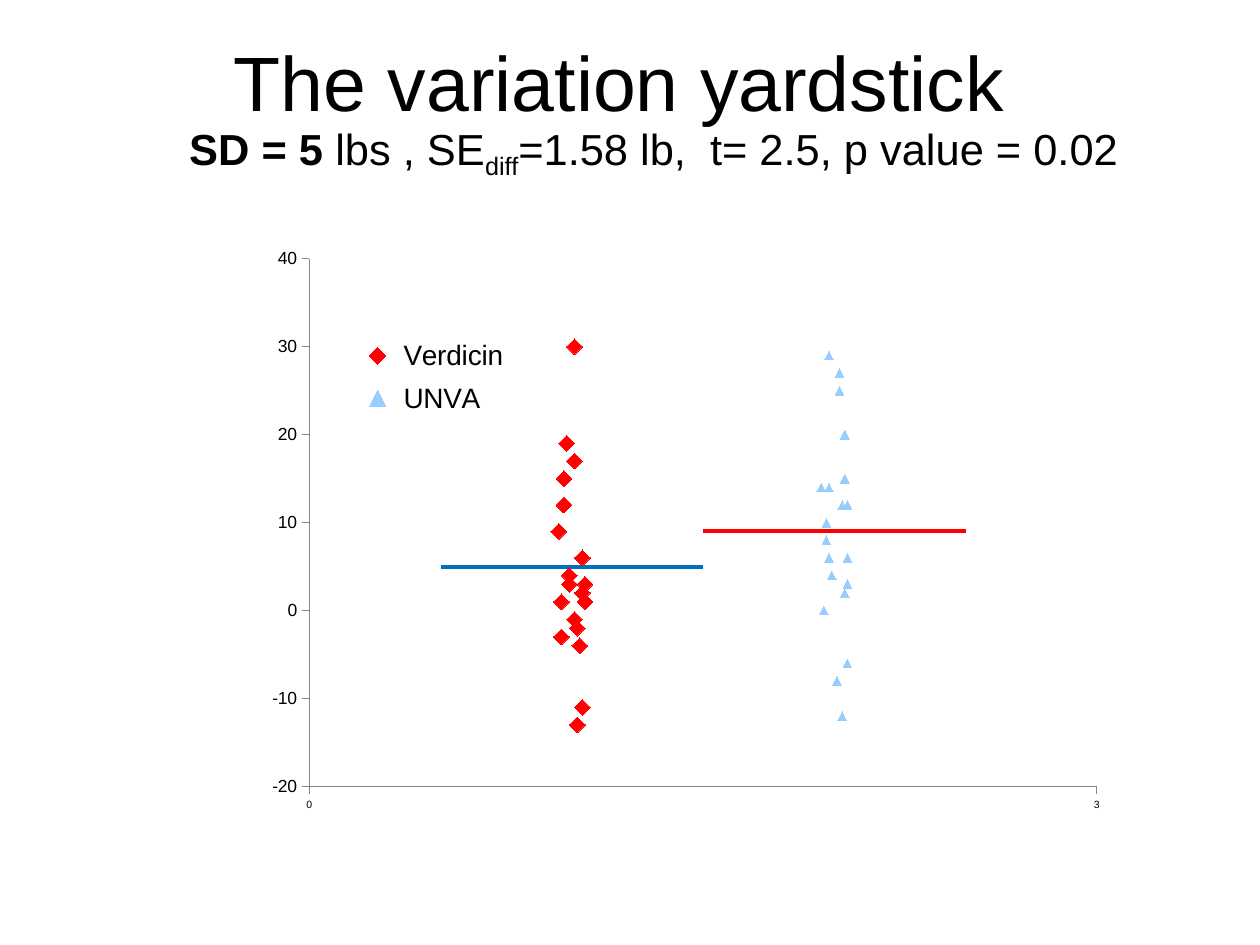
"""Builds a slide that compares two groups of values with their means."""
from dataclasses import dataclass
from typing import Optional

import lxml.etree
import pptx
import pptx.chart.data
import pptx.dml.color
import pptx.enum.chart
import pptx.enum.text
import pptx.oxml.ns
import pptx.oxml.xmlchemy
import pptx.util

Pt = pptx.util.Pt
FONT = "Arial"
COLORS = {"text": "000000", "axis": "868686", "red": "FF0000",
          "light_blue": "99CCFF", "blue": "0070C0"}
MARKERS = pptx.enum.chart.XL_MARKER_STYLE
CHART_BOX = (138, 124.5, 504, 349.2)
PLOT_BOX = (38.8, 23.4, 450, 301.7)
LEGEND_BOX = (60, 63, 96, 56)


@dataclass
class Run:
    text: str
    bold: bool = False
    baseline: int = 0


@dataclass
class Series:
    name: str
    x: list[float]
    y: list[float]
    color: str
    marker: Optional[MARKERS] = None
    size: int = 0


SUBTITLE = [Run("SD = 5 ", bold=True), Run("lbs , SE"), Run("diff", baseline=-25000),
            Run("=1.58 lb,  t= 2.5, p value = 0.02")]

SERIES = [
    Series("Verdicin",
           [1.01, 0.96, 0.96, 0.99, 1.04, 1.02, 1.01, 0.98, 1.01, 0.95,
            1.03, 1.05, 1.04, 0.97, 1.02, 1.05, 0.99, 0.97, 1.04, 0.97],
           [17, -3, 1, 4, -11, -13, 30, 19, -1, 9, -4, 3, 2, 15, -2, 1, 3, 12, 6, 12],
           "red", MARKERS.DIAMOND, 9),
    Series("UNVA",
           [2.05, 1.97, 1.95, 2.04, 1.97, 1.99, 2.03, 2.05, 2.04, 2.05,
            2.03, 1.98, 2.02, 2.01, 2.04, 1.96, 2.05, 2.02, 1.98, 1.98],
           [12, 8, 14, 20, 10, 4, 12, 6, 15, -6, -12, 29, 27, -8, 2, 0, 3, 25, 6, 14],
           "light_blue", MARKERS.TRIANGLE, 5),
    Series("Series 3", [0.5, 1.5], [5, 5], "blue"),
    Series("Series 4", [1.5, 2.5], [9, 9], "red"),
]


def rgb(name: str) -> pptx.dml.color.RGBColor:
    """Return the named colour."""
    return pptx.dml.color.RGBColor.from_string(COLORS[name])


def style_font(font, size: float) -> None:
    """Set the common font at a size in points."""
    font.name = FONT
    font.size = Pt(size)
    font.color.rgb = rgb("text")


def add_text(slide, box: tuple, runs: list[Run], size: float, anchor, alignment):
    """Add a one-paragraph text box and return its paragraph."""
    shape = slide.shapes.add_textbox(*map(Pt, box))
    shape.text_frame.word_wrap = True
    shape.text_frame.vertical_anchor = anchor
    paragraph = shape.text_frame.paragraphs[0]
    paragraph.alignment = alignment
    style_font(paragraph.font, size)
    for item in runs:
        run = paragraph.add_run()
        run.text = item.text
        if item.bold:
            run.font.bold = True
        if item.baseline:
            run.font._element.set("baseline", str(item.baseline))
    return paragraph


def chart_element(parent, tag: str, value=None):
    """Append a chart element with an optional val attribute."""
    element = lxml.etree.SubElement(parent, pptx.oxml.ns.qn(f"c:{tag}"))
    if value is not None:
        element.set("val", str(value))
    return element


def make_layout(box: tuple, inner: bool = False):
    """Return a manual layout for a box in points within the chart."""
    layout = pptx.oxml.xmlchemy.OxmlElement("c:layout")
    manual = chart_element(layout, "manualLayout")
    if inner:
        chart_element(manual, "layoutTarget", "inner")
    chart_element(manual, "xMode", "edge")
    chart_element(manual, "yMode", "edge")
    for tag, length, whole in zip("xywh", box, CHART_BOX[2:] * 2):
        chart_element(manual, tag, length / whole)
    return layout


def remove_layout(parent) -> None:
    """Remove the automatic layout of a chart part."""
    for layout in parent.findall(pptx.oxml.ns.qn("c:layout")):
        parent.remove(layout)


def style_axis(axis, minimum: float, maximum: float, unit: float, size: float) -> None:
    """Set the scale, line and labels of an axis."""
    axis.minimum_scale, axis.maximum_scale, axis.major_unit = minimum, maximum, unit
    axis.has_major_gridlines = False
    axis.major_tick_mark = pptx.enum.chart.XL_TICK_MARK.OUTSIDE
    axis.minor_tick_mark = pptx.enum.chart.XL_TICK_MARK.NONE
    axis.tick_label_position = pptx.enum.chart.XL_TICK_LABEL_POSITION.LOW
    axis.crosses = pptx.enum.chart.XL_AXIS_CROSSES.MINIMUM
    axis.format.line.color.rgb = rgb("axis")
    axis.format.line.width = Pt(0.75)
    style_font(axis.tick_labels.font, size)


def style_series(plotted, series: Series) -> None:
    """Draw a series as markers only or as a plain line."""
    plotted.smooth = False
    line = plotted.format.line
    if series.marker is None:
        line.color.rgb = rgb(series.color)
        line.width = Pt(2.25)
        plotted.marker.style = MARKERS.NONE
        return
    line.fill.background()
    plotted.marker.style = series.marker
    plotted.marker.size = series.size
    plotted.marker.format.fill.solid()
    plotted.marker.format.fill.fore_color.rgb = rgb(series.color)
    plotted.marker.format.line.color.rgb = rgb(series.color)


def style_legend(chart) -> None:
    """Place the legend and list only the series with markers."""
    chart.has_legend = True
    legend = chart.legend
    legend.position = pptx.enum.chart.XL_LEGEND_POSITION.RIGHT
    legend.include_in_layout = False
    style_font(legend.font, 16)
    remove_layout(legend._element)
    additions = []
    for index, series in enumerate(SERIES):
        if series.marker is None:
            entry = pptx.oxml.xmlchemy.OxmlElement("c:legendEntry")
            chart_element(entry, "idx", index)
            chart_element(entry, "delete", 1)
            additions.append(entry)
    previous = legend._element.find(pptx.oxml.ns.qn("c:legendPos"))
    for element in additions + [make_layout(LEGEND_BOX)]:
        previous.addnext(element)
        previous = element


def add_scatter(slide) -> None:
    """Add the scatter chart with the two mean lines."""
    data = pptx.chart.data.XyChartData()
    for series in SERIES:
        points = data.add_series(series.name)
        for x, y in zip(series.x, series.y):
            points.add_data_point(x, y)
    chart = slide.shapes.add_chart(
        pptx.enum.chart.XL_CHART_TYPE.XY_SCATTER, *map(Pt, CHART_BOX), data).chart
    chart.has_title = False
    style_font(chart.font, 10)
    style_axis(chart.category_axis, 0, 3, 3, 6)
    style_axis(chart.value_axis, -20, 40, 10, 10)
    plot = chart.plots[0]
    plot.vary_by_categories = False
    for plotted, series in zip(plot.series, SERIES):
        style_series(plotted, series)
    style_legend(chart)
    plot_area = chart._chartSpace.chart.plotArea
    remove_layout(plot_area)
    plot_area.insert(0, make_layout(PLOT_BOX, inner=True))


def main() -> None:
    """Build and save the presentation."""
    presentation = pptx.Presentation()
    presentation.slide_width, presentation.slide_height = Pt(720), Pt(540)
    slide = presentation.slides.add_slide(presentation.slide_layouts[6])
    anchors, alignments = pptx.enum.text.MSO_ANCHOR, pptx.enum.text.PP_ALIGN
    add_text(slide, (30, 12, 648, 68.4), [Run("The variation yardstick")], 44,
             anchors.MIDDLE, alignments.CENTER)
    subtitle = add_text(slide, (39, 66, 630, 42), SUBTITLE, 24.8,
                        anchors.TOP, alignments.LEFT)
    subtitle.space_before = Pt(3)
    subtitle._p.get_or_add_pPr().set("marL", str(int(Pt(62))))
    add_scatter(slide)
    presentation.save("out.pptx")


if __name__ == "__main__":
    main()
